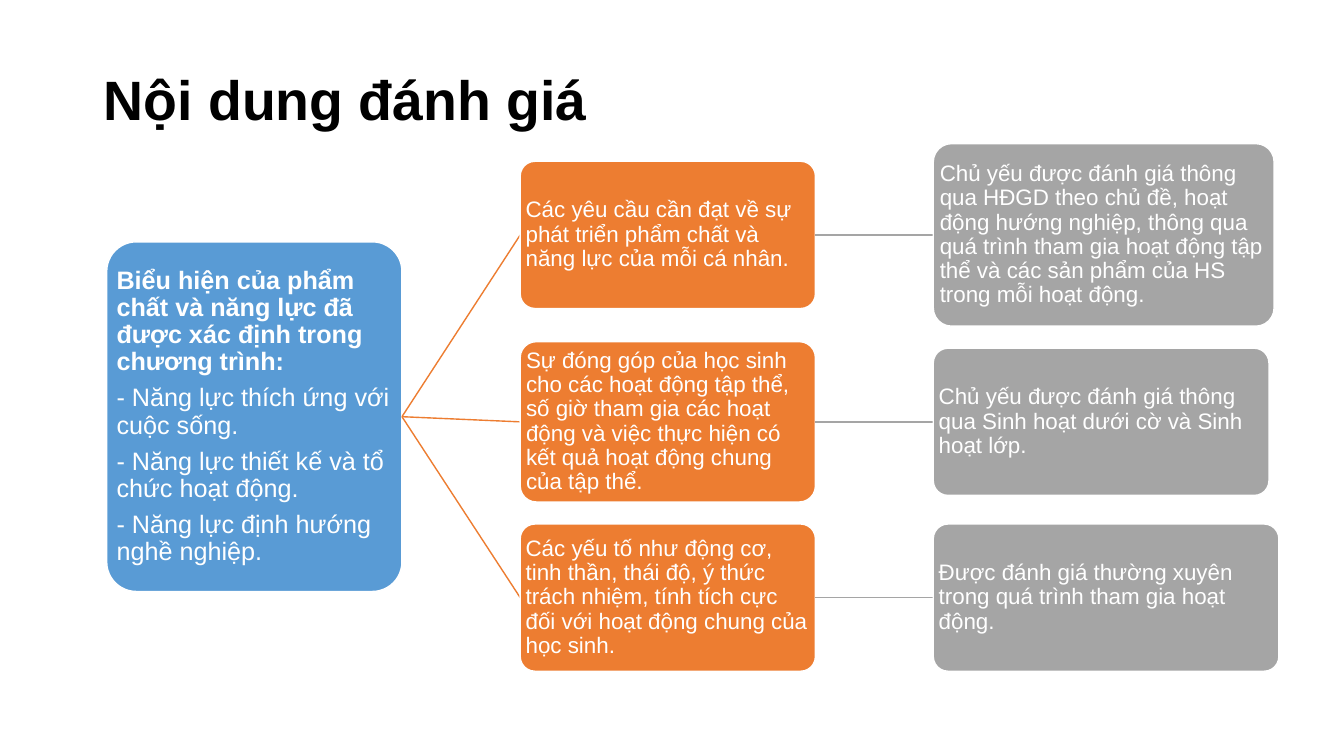
from pptx import Presentation
from pptx.dml.color import RGBColor
from pptx.enum.shapes import MSO_CONNECTOR, MSO_SHAPE
from pptx.enum.text import MSO_ANCHOR, MSO_AUTO_SIZE, PP_ALIGN
from pptx.oxml.ns import qn
from pptx.util import Cm, Pt
from lxml.etree import SubElement

BLACK = RGBColor(0x00, 0x00, 0x00)
WHITE = RGBColor(0xFF, 0xFF, 0xFF)
BLUE = RGBColor(0x59, 0x9B, 0xD5)
ORANGE = RGBColor(0xED, 0x7D, 0x31)
GREY = RGBColor(0xA5, 0xA5, 0xA5)

ROOT_LEFT, CRITERION_LEFT, METHOD_LEFT = 2.69, 13.11, 23.52
BOX_WIDTH = 7.44
ROOT_MIDDLE, ROOT_HEIGHT = 10.5, 8.81

ROOT_TEXT = [
    "Biểu hiện của phẩm chất và năng lực đã được xác định trong chương trình:",
    "- Năng lực thích ứng với cuộc sống.",
    "- Năng lực thiết kế và tổ chức hoạt động.",
    "- Năng lực định hướng nghề nghiệp.",
]

ROWS = [
    (5.92, 3.71,
     "Các yêu cầu cần đạt về sự phát triển phẩm chất và năng lực của mỗi cá nhân.",
     8.59, 4.6,
     "Chủ yếu được đánh giá thông qua HĐGD theo chủ đề, hoạt động hướng nghiệp, "
     "thông qua quá trình tham gia hoạt động tập thể và các sản phẩm của HS "
     "trong mỗi hoạt động."),
    (10.63, 4.04,
     "Sự đóng góp của học sinh cho các hoạt động tập thể, số giờ tham gia các "
     "hoạt động và việc thực hiện có kết quả hoạt động chung của tập thể.",
     8.46, 3.71,
     "Chủ yếu được đánh giá thông qua Sinh hoạt dưới cờ và Sinh hoạt lớp."),
    (15.06, 3.71,
     "Các yếu tố như động cơ, tinh thần, thái độ, ý thức trách nhiệm, tính tích "
     "cực đối với hoạt động chung của học sinh.",
     8.71, 3.71,
     "Được đánh giá thường xuyên trong quá trình tham gia hoạt động."),
]


class Diagram:
    font = "Arial"
    line_spacing = 0.9
    line_width = Pt(1)

    def __init__(self, s):
        self.s = s

    def add_text(self, tf, paragraphs, size, color, bold_first=False):
        tf.word_wrap = True
        tf.auto_size = MSO_AUTO_SIZE.NONE
        tf.vertical_anchor = MSO_ANCHOR.MIDDLE
        for i, text in enumerate(paragraphs):
            p = tf.add_paragraph() if i else tf.paragraphs[0]
            p.alignment = PP_ALIGN.LEFT
            p.line_spacing = self.line_spacing
            p.space_before = Pt(6.3 if i else 0)
            r = p.add_run()
            r.text = text
            r.font.name = self.font
            r.font.size = Pt(size)
            r.font.bold = bold_first and i == 0
            r.font.color.rgb = color

    def title(self, text):
        sp = self.s.shapes.title
        sp.left, sp.top, sp.width, sp.height = Cm(2.36), Cm(1.73), Cm(25.4), Cm(1.7)
        sp.fill.solid()
        sp.fill.fore_color.rgb = WHITE
        self.add_text(sp.text_frame, [text], 39.6, BLACK, bold_first=True)

    def box(self, left, middle, width, height, color, paragraphs, size=16, bold_first=False):
        sp = self.s.shapes.add_shape(
            MSO_SHAPE.ROUNDED_RECTANGLE,
            Cm(left), Cm(middle - height / 2), Cm(width), Cm(height))
        sp.adjustments[0] = 0.1
        sp.shadow.inherit = False
        sp.fill.solid()
        sp.fill.fore_color.rgb = color
        sp.line.color.rgb = WHITE
        sp.line.width = self.line_width
        tf = sp.text_frame
        tf.margin_left = tf.margin_right = tf.margin_top = tf.margin_bottom = Cm(0.03)
        self.add_text(tf, paragraphs, size, WHITE, bold_first)

    def link(self, x1, y1, x2, y2, color):
        line = self.s.shapes.add_connector(
            MSO_CONNECTOR.STRAIGHT, Cm(x1), Cm(y1), Cm(x2), Cm(y2))
        line.line.color.rgb = color
        line.line.width = self.line_width
        SubElement(line._element.spPr, qn("a:effectLst"))


def main():
    prs = Presentation()
    prs.slide_width, prs.slide_height = Cm(33.87), Cm(19.05)
    diagram = Diagram(prs.slides.add_slide(prs.slide_layouts[5]))

    diagram.title("Nội dung đánh giá")
    diagram.box(ROOT_LEFT, ROOT_MIDDLE, BOX_WIDTH, ROOT_HEIGHT, BLUE,
                ROOT_TEXT, size=18, bold_first=True)
    for middle, height, criterion, method_width, method_height, method in ROWS:
        diagram.link(ROOT_LEFT + BOX_WIDTH, ROOT_MIDDLE, CRITERION_LEFT, middle, ORANGE)
        diagram.box(CRITERION_LEFT, middle, BOX_WIDTH, height, ORANGE, [criterion])
        diagram.link(CRITERION_LEFT + BOX_WIDTH, middle, METHOD_LEFT, middle, GREY)
        diagram.box(METHOD_LEFT, middle, method_width, method_height, GREY, [method])

    prs.save("out.pptx")


if __name__ == "__main__":
    main()
